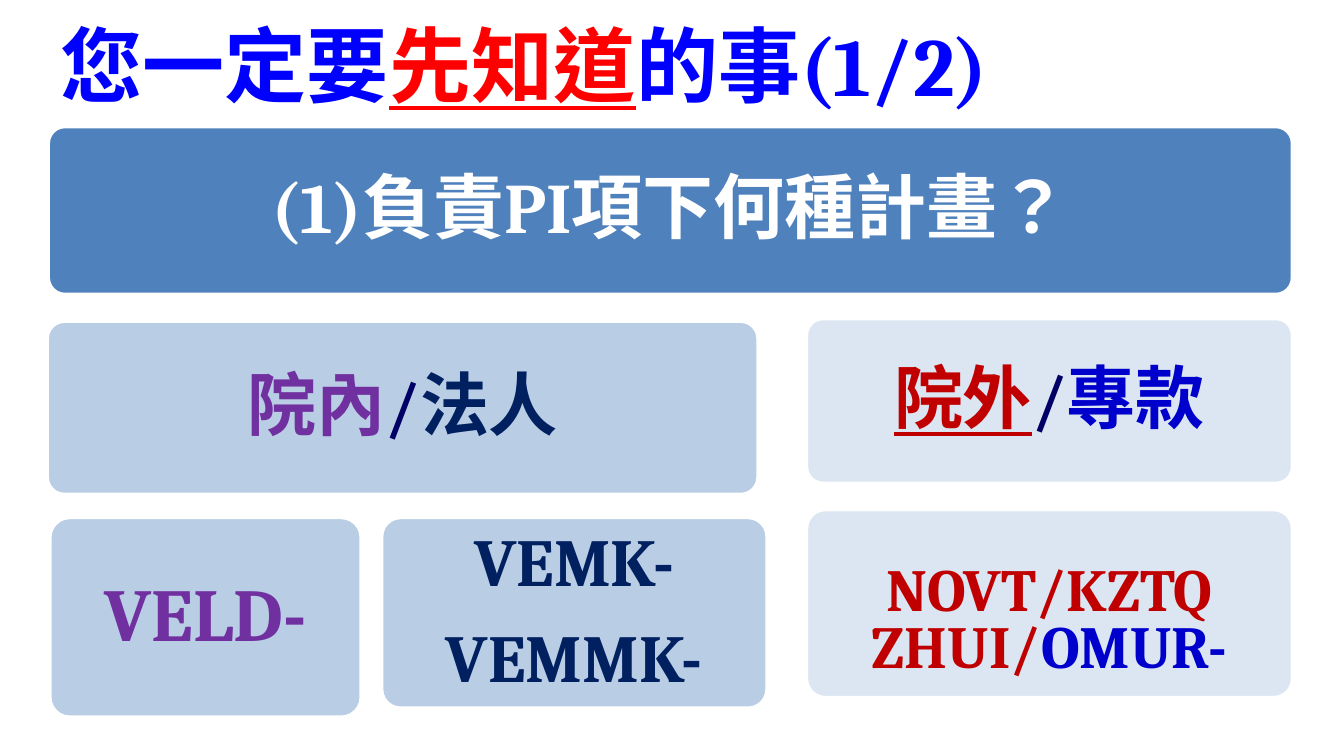
from pptx import Presentation
from pptx.dml.color import RGBColor
from pptx.enum.lang import MSO_LANGUAGE_ID
from pptx.enum.shapes import MSO_SHAPE
from pptx.enum.text import MSO_ANCHOR, MSO_AUTO_SIZE, PP_ALIGN
from pptx.util import Cm, Pt

ROUNDED = MSO_SHAPE.ROUNDED_RECTANGLE
MIDDLE, BOTTOM = MSO_ANCHOR.MIDDLE, MSO_ANCHOR.BOTTOM
LEFT, CENTER = PP_ALIGN.LEFT, PP_ALIGN.CENTER
CHINESE = MSO_LANGUAGE_ID.TRADITIONAL_CHINESE

FONT = "Cambria"
WHITE, BLUE, RED = "FFFFFF", "0000FF", "FF0000"
HEADER_FILL, INTERNAL_FILL, EXTERNAL_FILL = "4F81BD", "B9CDE5", "DCE6F2"
PURPLE, NAVY, SLASH = "7030A0", "002060", "000066"
DARK_RED, ROYAL = "C00000", "0000CC"
INSET_PER_POINT = 0.01  # cm of margin for each point of text size
SPACE_AFTER = 0.35      # share of the text size

# A run is (text, colour) or (text, colour, underlined)
TITLE = [("您一定要", BLUE), ("先知道", RED, True), ("的事(1/2)", BLUE)]

# Place in cm, fill, text size, line spacing, anchor, paragraphs
BOXES = [
    ((0.91, 2.39, 23.52, 3.18), HEADER_FILL, 38, 0.9, MIDDLE,
     [[("(1)負責PI項下何種計畫？", WHITE)]]),
    ((0.89, 6.07, 13.44, 3.28), INTERNAL_FILL, 37, 0.9, MIDDLE,
     [[("院內", PURPLE), ("/", SLASH), ("法人", NAVY)]]),
    ((0.94, 9.78, 5.89, 3.78), INTERNAL_FILL, 40, 0.9, MIDDLE,
     [[("VELD-", PURPLE)]]),
    ((7.21, 9.78, 7.29, 3.61), INTERNAL_FILL, 36, 0.9, MIDDLE,
     [[("VEMK-", NAVY)], [("VEMMK-", NAVY)]]),
    ((15.24, 6.02, 9.19, 3.12), EXTERNAL_FILL, 37, 0.9, MIDDLE,
     [[("院外", DARK_RED, True), ("/", SLASH), ("專款", ROYAL)]]),
    ((15.24, 9.63, 9.19, 3.56), EXTERNAL_FILL, 32, 0.5, BOTTOM,
     [[("NOVT/KZTQ", DARK_RED)], [("ZHUI/", DARK_RED), ("OMUR-", ROYAL)]]),
]


def rgb(value):
    return RGBColor.from_string(value)


def write_paragraph(paragraph, runs, size, align):
    paragraph.alignment = align
    paragraph.font.name = FONT
    paragraph.font.size = Pt(size)
    paragraph.font.bold = True
    for text, color, *underlined in runs:
        run = paragraph.add_run()
        run.text = text
        run.font.language_id = CHINESE
        run.font.color.rgb = rgb(color)
        if underlined:
            run.font.underline = True


def add_title(slide):
    title = slide.shapes.title
    title.left, title.top, title.width, title.height = map(Cm, (0.89, 0, 22.86, 2.39))
    frame = title.text_frame
    frame.auto_size = MSO_AUTO_SIZE.NONE
    frame.vertical_anchor = MIDDLE
    write_paragraph(frame.paragraphs[0], TITLE, 44, LEFT)


def add_box(slide, place, fill, size, spacing, anchor, paragraphs):
    box = slide.shapes.add_shape(ROUNDED, *map(Cm, place))
    box.adjustments[0] = 0.1
    box.shadow.inherit = False
    box.fill.solid()
    box.fill.fore_color.rgb = rgb(fill)
    box.line.color.rgb = rgb(WHITE)
    box.line.width = Pt(2)

    frame = box.text_frame
    frame.word_wrap = True
    frame.vertical_anchor = anchor
    inset = Cm(size * INSET_PER_POINT)
    frame.margin_left = frame.margin_right = inset
    frame.margin_top = frame.margin_bottom = inset
    for index, runs in enumerate(paragraphs):
        paragraph = frame.add_paragraph() if index else frame.paragraphs[0]
        paragraph.line_spacing = spacing
        paragraph.space_after = Pt(size * SPACE_AFTER)
        write_paragraph(paragraph, runs, size, CENTER)


def main():
    deck = Presentation()
    deck.slide_width, deck.slide_height = Cm(25.4), Cm(14.29)
    title_only = deck.slide_layouts[5]
    slide = deck.slides.add_slide(title_only)
    add_title(slide)
    for box in BOXES:
        add_box(slide, *box)
    deck.save("out.pptx")


if __name__ == "__main__":
    main()
